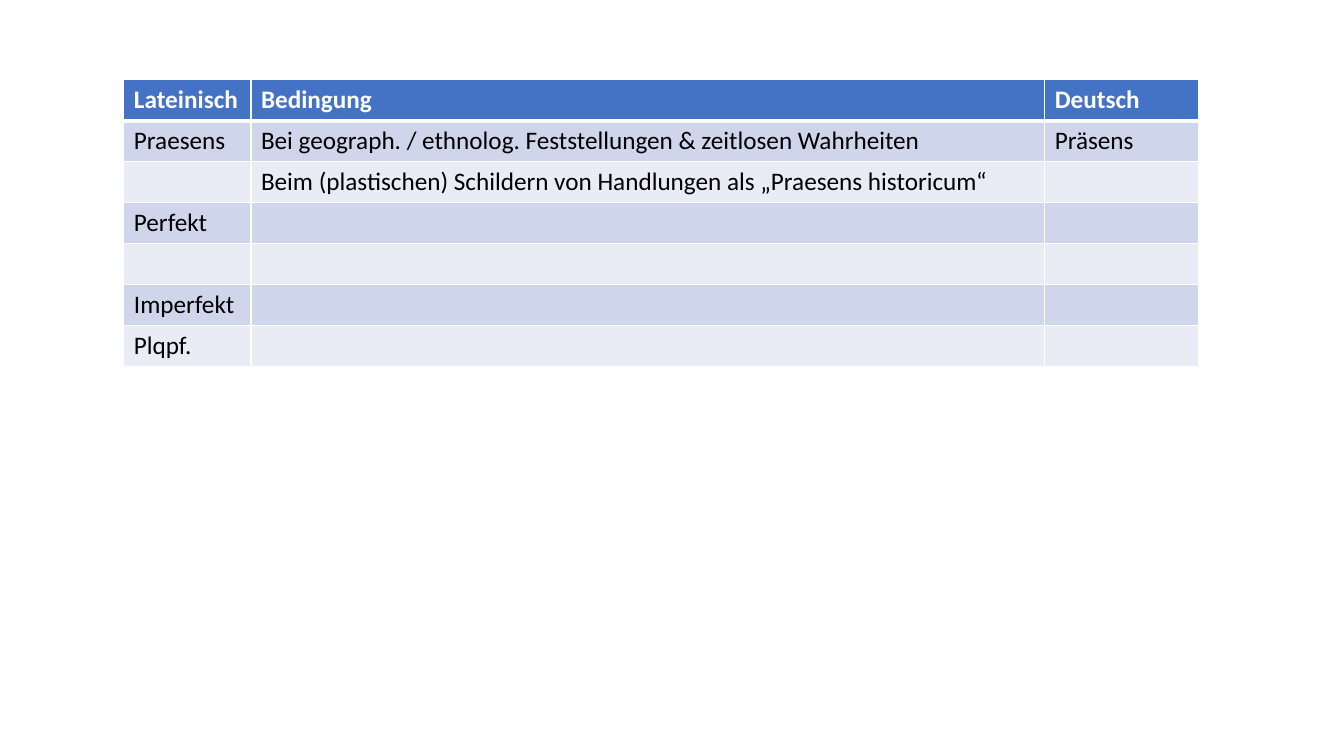
from lxml.etree import SubElement
from pptx import Presentation
from pptx.dml.color import RGBColor
from pptx.oxml.ns import qn
from pptx.util import Pt

EMU_PER_PX = 9525
SLIDE_SIZE = (1280, 720)
TABLE_LEFT, TABLE_TOP = 118, 76
COLUMN_WIDTHS = (121, 756, 147)
ROW_HEIGHT = 39

FONT = "Calibri"
WHITE, BLACK = "FFFFFF", "000000"
HEADER_FILL = "4472C4"
BAND_FILLS = ("CFD5EA", "E9EBF5")

TENSES = [
    ("Lateinisch", "Bedingung", "Deutsch"),
    ("Praesens", "Bei geograph. / ethnolog. Feststellungen & zeitlosen Wahrheiten", "Präsens"),
    ("", "Beim (plastischen) Schildern von Handlungen als „Praesens historicum“", ""),
    ("Perfekt", "", ""),
    ("", "", ""),
    ("Imperfekt", "", ""),
    ("Plqpf.", "", ""),
]


def px(length):
    return length * EMU_PER_PX


def color(value):
    return RGBColor.from_string(value)


def write(cell, text, size=18, fill=BLACK, bold=False):
    paragraph = cell.text_frame.paragraphs[0]
    paragraph.font.size = Pt(size)
    if text:
        run = paragraph.add_run()
        run.text = text
        run.font.name = FONT
        run.font.size = Pt(size)
        run.font.bold = bold
        run.font.color.rgb = color(fill)


def set_borders(cell, **widths):
    """Draw white cell borders; widths are points by side, in schema order."""
    properties = cell._tc.get_or_add_tcPr()
    for side, width in widths.items():
        line = SubElement(properties, qn(f"a:ln{side}"), w=str(Pt(width)))
        solid = SubElement(line, qn("a:solidFill"))
        SubElement(solid, qn("a:srgbClr"), val=WHITE)


def add_tense_table(slide):
    frame = slide.shapes.add_table(
        len(TENSES), len(COLUMN_WIDTHS), px(TABLE_LEFT), px(TABLE_TOP),
        px(sum(COLUMN_WIDTHS)), px(ROW_HEIGHT * len(TENSES)))
    table = frame.table
    table.horz_banding = False
    for column, width in zip(table.columns, COLUMN_WIDTHS):
        column.width = px(width)
    for row_index, texts in enumerate(TENSES):
        is_header = row_index == 0
        table.rows[row_index].height = px(ROW_HEIGHT)
        for column_index, text in enumerate(texts):
            cell = table.cell(row_index, column_index)
            write(cell, text, fill=WHITE if is_header else BLACK, bold=is_header)
            set_borders(cell, L=1, R=1, T=3 if row_index == 1 else 1, B=3 if is_header else 1)
            cell.fill.solid()
            band = BAND_FILLS[(row_index - 1) % 2]
            cell.fill.fore_color.rgb = color(HEADER_FILL if is_header else band)


def main():
    presentation = Presentation()
    presentation.slide_width, presentation.slide_height = map(px, SLIDE_SIZE)
    slide = presentation.slides.add_slide(presentation.slide_layouts[6])
    add_tense_table(slide)
    presentation.save("out.pptx")


if __name__ == "__main__":
    main()
